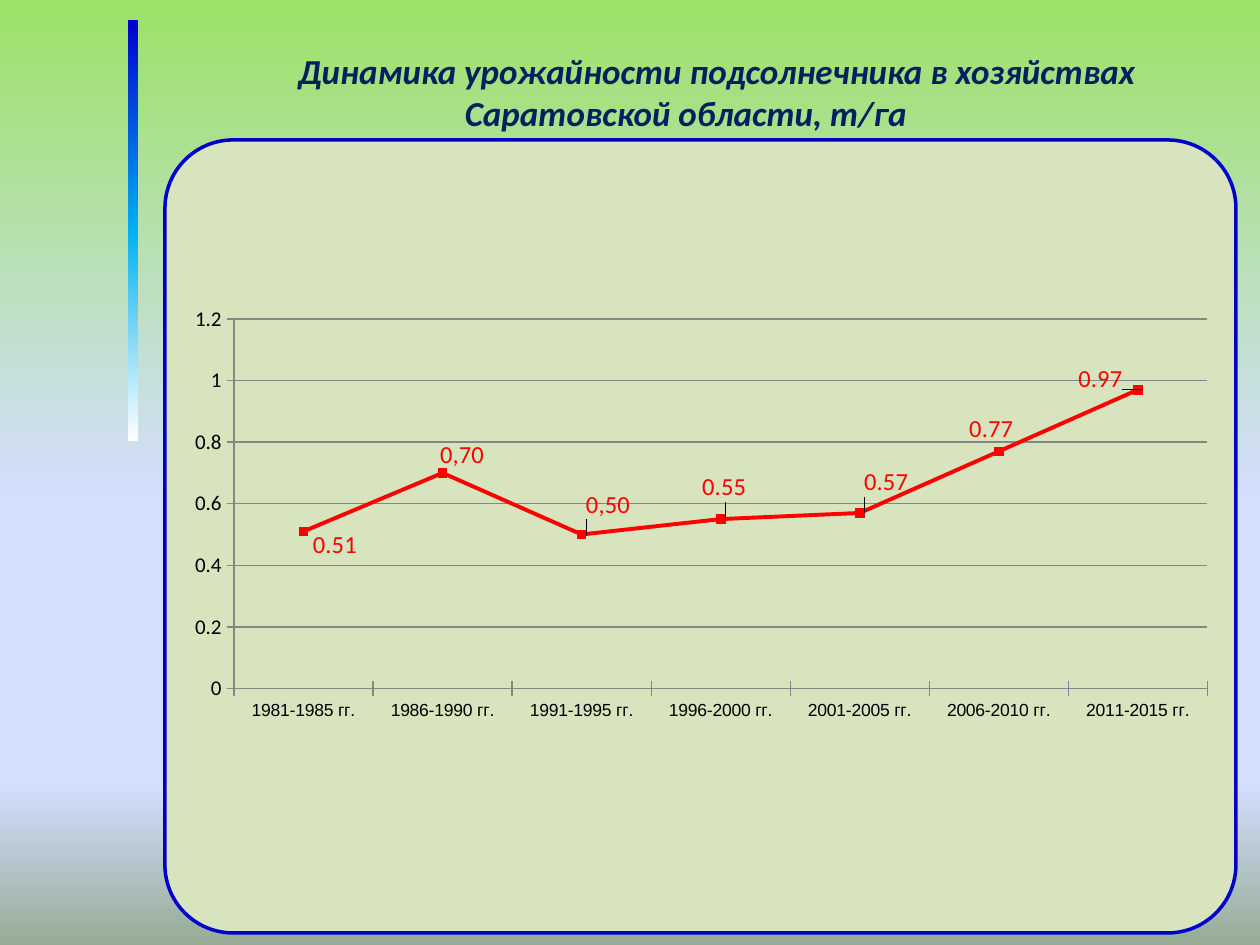
from lxml import etree
from pptx import Presentation
from pptx import util as u
from pptx.chart import data as chart_data
from pptx.dml import color as dml
from pptx.enum import chart as kinds, shapes, text
from pptx.oxml import ns

SCALE = 914400 / 126


def rgb(value):
    return dml.RGBColor.from_string(value)


def paint_gradient(fill, element, stops):
    fill.gradient()
    fill.gradient_angle = 270
    stop_list = next(element.iter(ns.qn("a:gsLst")))
    for stop in list(stop_list):
        stop_list.remove(stop)
    for percent, value in stops:
        stop = etree.SubElement(stop_list, ns.qn("a:gs"), pos=str(percent * 1000))
        etree.SubElement(stop, ns.qn("a:srgbClr"), val=value)


deck = Presentation()
deck.slide_width, deck.slide_height = u.Inches(10), u.Inches(7.5)
page = deck.slides.add_slide(deck.slide_layouts[5])
paint_gradient(page.background.fill, page.element,
               [(0, "9BE266"), (53, "D4DEFF"), (83, "D4DEFF"), (100, "96AB94")])

bar_area, panel_area, title_area, chart_area = [
    [round(length * SCALE) for length in area]
    for area in [(128, 20, 10, 421), (165, 140, 1071, 793),
                 (137, 43, 1098, 97), (174, 255, 1071, 525)]
]

bar = page.shapes.add_shape(shapes.MSO_SHAPE.RECTANGLE, *bar_area)
bar.shadow.inherit = False
bar.line.fill.background()
paint_gradient(bar.fill, bar.element, [(0, "0000CC"), (50, "00B0F0"), (100, "FFFFFF")])

panel = page.shapes.add_shape(shapes.MSO_SHAPE.ROUNDED_RECTANGLE, *panel_area)
panel.adjustments[0] = 0.086
panel.shadow.inherit = False
panel.fill.solid()
panel.fill.fore_color.rgb = rgb("D7E4BD")
panel.line.color.rgb = rgb("0000CC")
panel.line.width = u.Pt(2)

title = page.shapes.title
title.left, title.top, title.width, title.height = title_area
frame = title.text_frame
frame.text = "Динамика урожайности подсолнечника в хозяйствах Саратовской области, т/га"
frame.word_wrap = True
frame.auto_size = text.MSO_AUTO_SIZE.SHAPE_TO_FIT_TEXT
frame.vertical_anchor = text.MSO_ANCHOR.MIDDLE
para = frame.paragraphs[0]
para.alignment = text.PP_ALIGN.CENTER
para._p.get_or_add_pPr().set("indent", str(u.Inches(0.49)))
span = para.runs[0]
span.font.name = "Calibri"
span.font.size = u.Pt(20)
span.font.bold = span.font.italic = True
span.font.color.rgb = rgb("002060")

yields = chart_data.CategoryChartData()
yields.categories = [f"{year}-{year + 4} гг." for year in range(1981, 2012, 5)]
yields.add_series("Series 1", [0.51, 0.7, 0.5, 0.55, 0.57, 0.77, 0.97])
chart = page.shapes.add_chart(kinds.XL_CHART_TYPE.LINE_MARKERS, *chart_area, yields).chart
chart.has_legend = False
chart.has_title = False
chart.font.name = "Calibri"
chart.font.size = u.Pt(18)
chart.font.color.rgb = rgb("000000")
chart.plots[0].vary_by_categories = False

years, scale = chart.category_axis, chart.value_axis
scale.minimum_scale, scale.maximum_scale, scale.major_unit = 0, 1.2, 0.2
scale.has_major_gridlines = True
for axis, size in [(years, 10), (scale, 12)]:
    axis.major_tick_mark = kinds.XL_TICK_MARK.CROSS
    axis.tick_labels.font.size = u.Pt(size)
years.tick_labels.font.name = "Arial"
for line in [years.format.line, scale.format.line, scale.major_gridlines.format.line]:
    line.color.rgb = rgb("868686")
    line.width = u.Pt(0.75)

series = chart.plots[0].series[0]
series.smooth = False
series.format.line.color.rgb = rgb("FF0000")
series.format.line.width = u.Pt(2.25)
series.marker.style = kinds.XL_MARKER_STYLE.SQUARE
series.marker.size = 5
series.marker.format.fill.solid()
series.marker.format.fill.fore_color.rgb = rgb("FF0000")
series.marker.format.line.color.rgb = rgb("FF0000")

labels = series.data_labels
labels.show_value = True
labels.position = kinds.XL_LABEL_POSITION.RIGHT
labels.font.size = u.Pt(14)
labels.font.color.rgb = rgb("FF0000")
label_texts = {1: "0,70", 2: "0,50"}
for index in range(7):
    label = series.points[index].data_label
    if index in label_texts:
        label.text_frame.text = label_texts[index]
        font = label.text_frame.paragraphs[0].runs[0].font
    else:
        font = label.font
    font.size = u.Pt(14)
    font.color.rgb = rgb("FF0000")
    label.position = kinds.XL_LABEL_POSITION.RIGHT


def add_layout(anchor, **settings):
    layout = etree.Element(ns.qn("c:layout"))
    manual = etree.SubElement(layout, ns.qn("c:manualLayout"))
    for name, value in settings.items():
        etree.SubElement(manual, ns.qn(f"c:{name}"), val=str(value))
    for old in anchor.getparent().findall(ns.qn("c:layout")):
        anchor.getparent().remove(old)
    return layout


offsets = [(0, 14), (-12, -18), (-5, -30), (-28, -32), (-5, -31), (-39, -22), (-69, -11)]
for node, (across, down) in zip(chart.element.iter(ns.qn("c:dLbl")), offsets):
    number = node.find(ns.qn("c:idx"))
    number.addnext(add_layout(number, x=round(across / 1071, 4), y=round(down / 525, 4)))

plot_area = next(chart.element.iter(ns.qn("c:plotArea")))
plot_area.insert(0, add_layout(plot_area[-1], layoutTarget="inner", xMode="edge", yMode="edge",
                               x=0.056, y=0.122, w=0.909, h=0.704))

deck.save("out.pptx")
